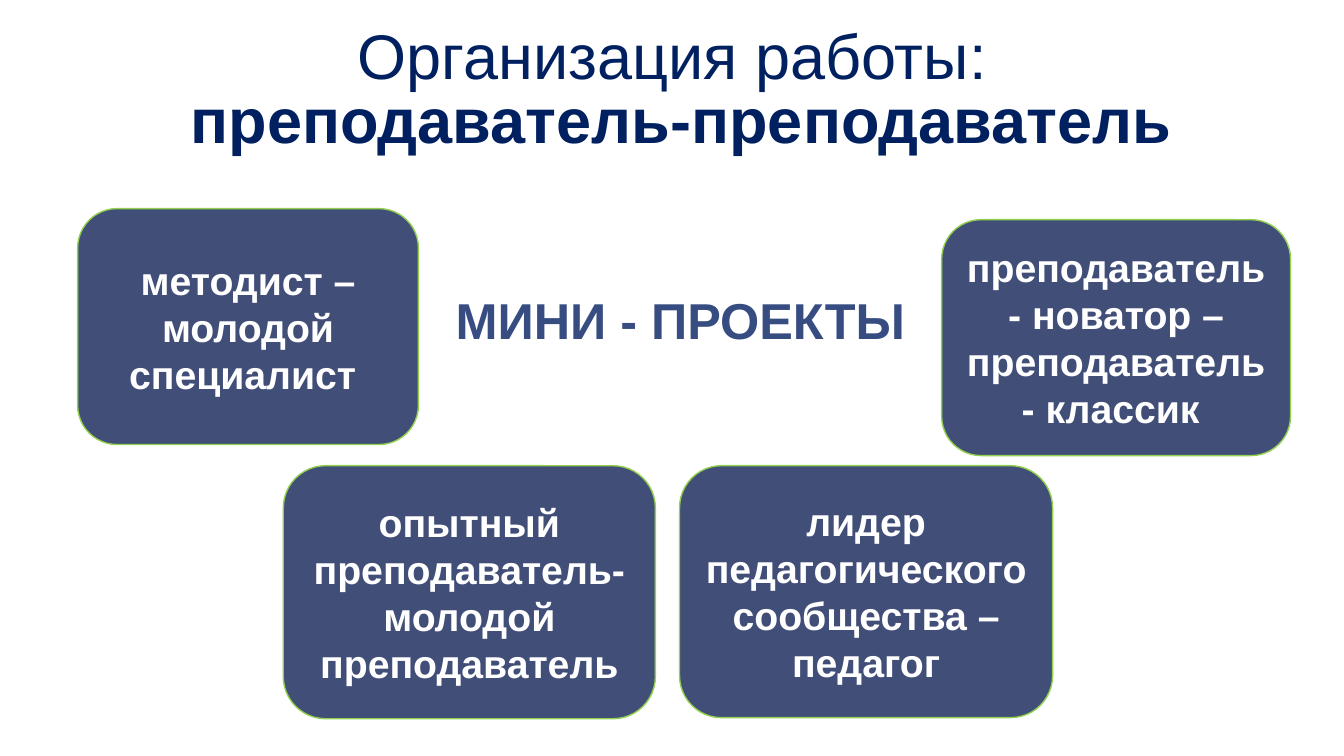
from dataclasses import dataclass

from pptx import Presentation
from pptx.dml.color import RGBColor
from pptx.enum.shapes import MSO_SHAPE
from pptx.enum.text import MSO_ANCHOR, PP_ALIGN
from pptx.util import Inches, Pt

TITLE_LEAD = "Организация работы: "
TITLE_PAIR = "преподаватель-преподаватель"
TOPIC = "МИНИ - ПРОЕКТЫ"

# Text, then left, top, width and height in inches
PAIRS = [
    ("методист – молодой специалист ", (0.77, 2.07, 3.38, 2.34)),
    ("преподаватель - новатор – преподаватель - классик ", (9.34, 2.18, 3.46, 2.34)),
    ("опытный преподаватель-молодой преподаватель", (2.81, 4.62, 3.69, 2.51)),
    ("лидер педагогического сообщества – педагог", (6.74, 4.62, 3.7, 2.5)),
]
TITLE_AREA = (0.18, 0.12, 13.15, 1.5)
TOPIC_AREA = (4.31, 2.84, 4.88, 0.79)


@dataclass(frozen=True)
class Theme:
    font: str = "Arial"
    title: RGBColor = RGBColor(0x00, 0x20, 0x60)
    topic: RGBColor = RGBColor(0x37, 0x4C, 0x81)
    card: RGBColor = RGBColor(0x41, 0x4E, 0x77)
    border: RGBColor = RGBColor(0x92, 0xD0, 0x50)
    card_text: RGBColor = RGBColor(0xFF, 0xFF, 0xFF)
    title_size: int = 45
    topic_size: int = 36
    card_size: int = 28


THEME = Theme()


def add_span(para, text, size, color, bold=True):
    span = para.add_run()
    span.text = text
    span.font.name = THEME.font
    span.font.size = Pt(size)
    span.font.bold = bold
    span.font.color.rgb = color


def centred_paragraph(shape, anchor, line_spacing=1.0):
    frame = shape.text_frame
    frame.word_wrap = True
    frame.vertical_anchor = anchor
    para = frame.paragraphs[0]
    para.alignment = PP_ALIGN.CENTER
    para.line_spacing = line_spacing
    return para


def add_text_box(page, area, anchor, line_spacing):
    """Add an empty heading box and return its paragraph."""
    box = page.shapes.add_textbox(*map(Inches, area))
    frame = box.text_frame
    frame.margin_left = frame.margin_right = Inches(0.13)
    frame.margin_top = frame.margin_bottom = Inches(0.07)
    return centred_paragraph(box, anchor, line_spacing)


def add_card(page, text, area):
    card = page.shapes.add_shape(MSO_SHAPE.ROUNDED_RECTANGLE, *map(Inches, area))
    card.shadow.inherit = False
    card.fill.solid()
    card.fill.fore_color.rgb = THEME.card
    card.line.color.rgb = THEME.border
    card.line.width = Pt(1)
    para = centred_paragraph(card, MSO_ANCHOR.MIDDLE)
    add_span(para, text, THEME.card_size, THEME.card_text)


def main():
    deck = Presentation()
    deck.slide_width, deck.slide_height = Inches(13.33), Inches(7.5)
    page = deck.slides.add_slide(deck.slide_layouts[6])

    title = add_text_box(page, TITLE_AREA, MSO_ANCHOR.BOTTOM, 0.85)
    add_span(title, TITLE_LEAD, THEME.title_size, THEME.title, bold=False)
    title.add_line_break()
    add_span(title, TITLE_PAIR, THEME.title_size, THEME.title)

    topic = add_text_box(page, TOPIC_AREA, MSO_ANCHOR.TOP, 0.95)
    add_span(topic, TOPIC, THEME.topic_size, THEME.topic)

    for text, area in PAIRS:
        add_card(page, text, area)

    deck.save("out.pptx")


if __name__ == "__main__":
    main()
